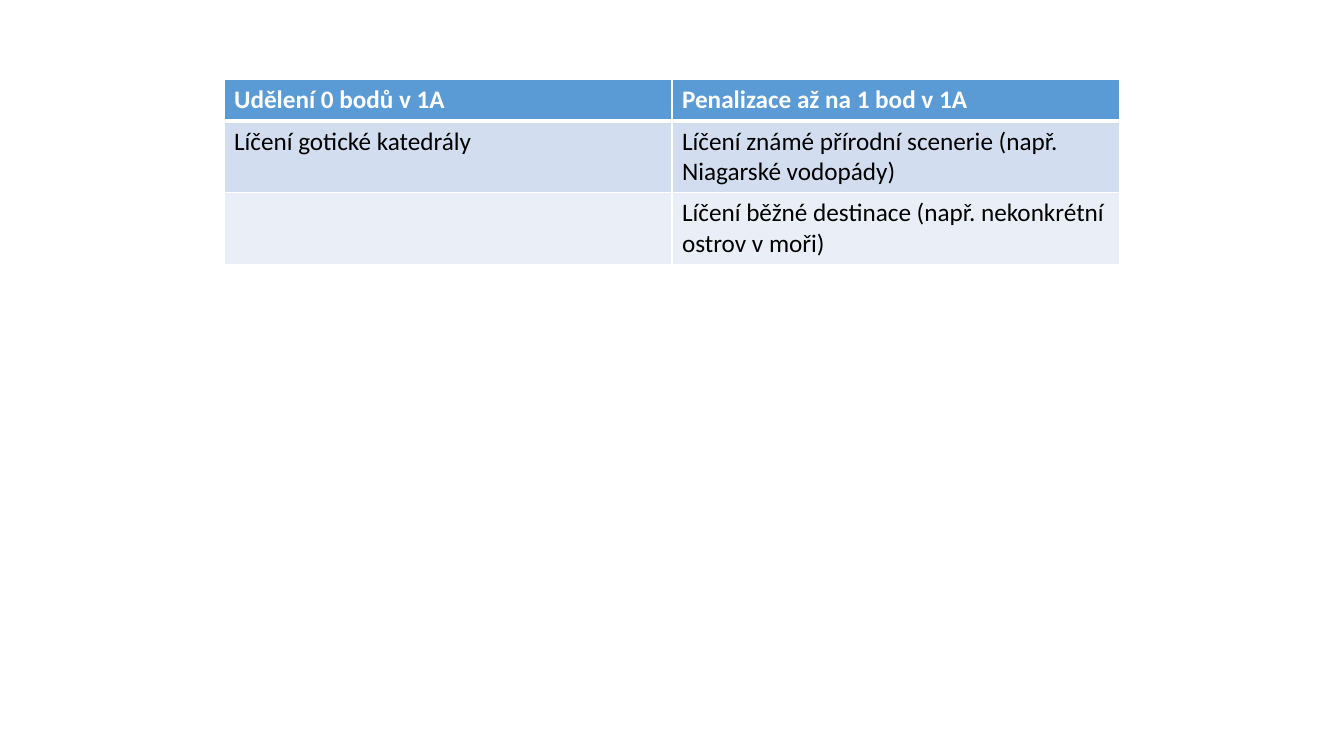
from lxml import etree
from pptx import Presentation
from pptx import util as u
from pptx.dml.color import RGBColor
from pptx.oxml.ns import qn

WIDTH, HEIGHT = 13.33, 7.5
GRID_COLUMNS, GRID_ROWS = 6, 75


def colour(hex_value):
    return RGBColor.from_string(hex_value)


def write(frame, content, *, font="Calibri", size=18, ink="000000", bold=False):
    run = frame.paragraphs[0].add_run()
    run.text = content
    run.font.name = font
    run.font.size = u.Pt(size)
    run.font.bold = bold
    run.font.color.rgb = colour(ink)


class Page:
    """Style and current slide, measured in grid columns and rows."""

    header_fill = "5B9BD5"
    band_fills = ("D2DEEF", "EAEFF7")
    white = "FFFFFF"

    def __init__(self, deck):
        self.slide = deck.slides.add_slide(deck.slide_layouts[6])

    def x(self, columns):
        return u.Inches(columns * WIDTH / GRID_COLUMNS)

    def y(self, rows):
        return u.Inches(rows * HEIGHT / GRID_ROWS)

    def borders(self, cell, **widths):
        properties = cell._tc.get_or_add_tcPr()
        for side in ("L", "R", "T", "B"):
            line = etree.SubElement(properties, qn(f"a:ln{side}"),
                                    w=str(u.Pt(widths.get(side, 1))))
            fill = etree.SubElement(line, qn("a:solidFill"))
            etree.SubElement(fill, qn("a:srgbClr"), val=self.white)

    def table(self, rows, left, top, column_span, row_spans):
        columns = len(rows[0])
        table = self.slide.shapes.add_table(
            len(rows), columns, self.x(left), self.y(top),
            self.x(column_span * columns), self.y(sum(row_spans))).table
        for column in table.columns:
            column.width = self.x(column_span)
        for index, (row, span) in enumerate(zip(rows, row_spans)):
            table.rows[index].height = self.y(span)
            is_header = index == 0
            fill = self.header_fill if is_header else self.band_fills[(index - 1) % 2]
            # A thicker rule separates the header from the body
            rule = {0: {"B": 3}, 1: {"T": 3}}.get(index, {})
            for cell, content in zip(table.rows[index].cells, row):
                self.borders(cell, **rule)
                cell.fill.solid()
                cell.fill.fore_color.rgb = colour(fill)
                if content:
                    write(cell.text_frame, content, bold=is_header,
                          ink=self.white if is_header else "000000")


def main():
    deck = Presentation()
    deck.slide_width, deck.slide_height = u.Inches(WIDTH), u.Inches(HEIGHT)
    page = Page(deck)

    # Scoring rules
    scoring_rules = [
        ("Udělení 0 bodů v 1A", "Penalizace až na 1 bod v 1A"),
        ("Líčení gotické katedrály",
         "Líčení známé přírodní scenerie (např. Niagarské vodopády)"),
        ("", "Líčení běžné destinace (např. nekonkrétní ostrov v moři)"),
    ]
    page.table(scoring_rules, left=1, top=7.9, column_span=2, row_spans=(4.1, 7, 7))

    deck.save("out.pptx")


if __name__ == "__main__":
    main()
